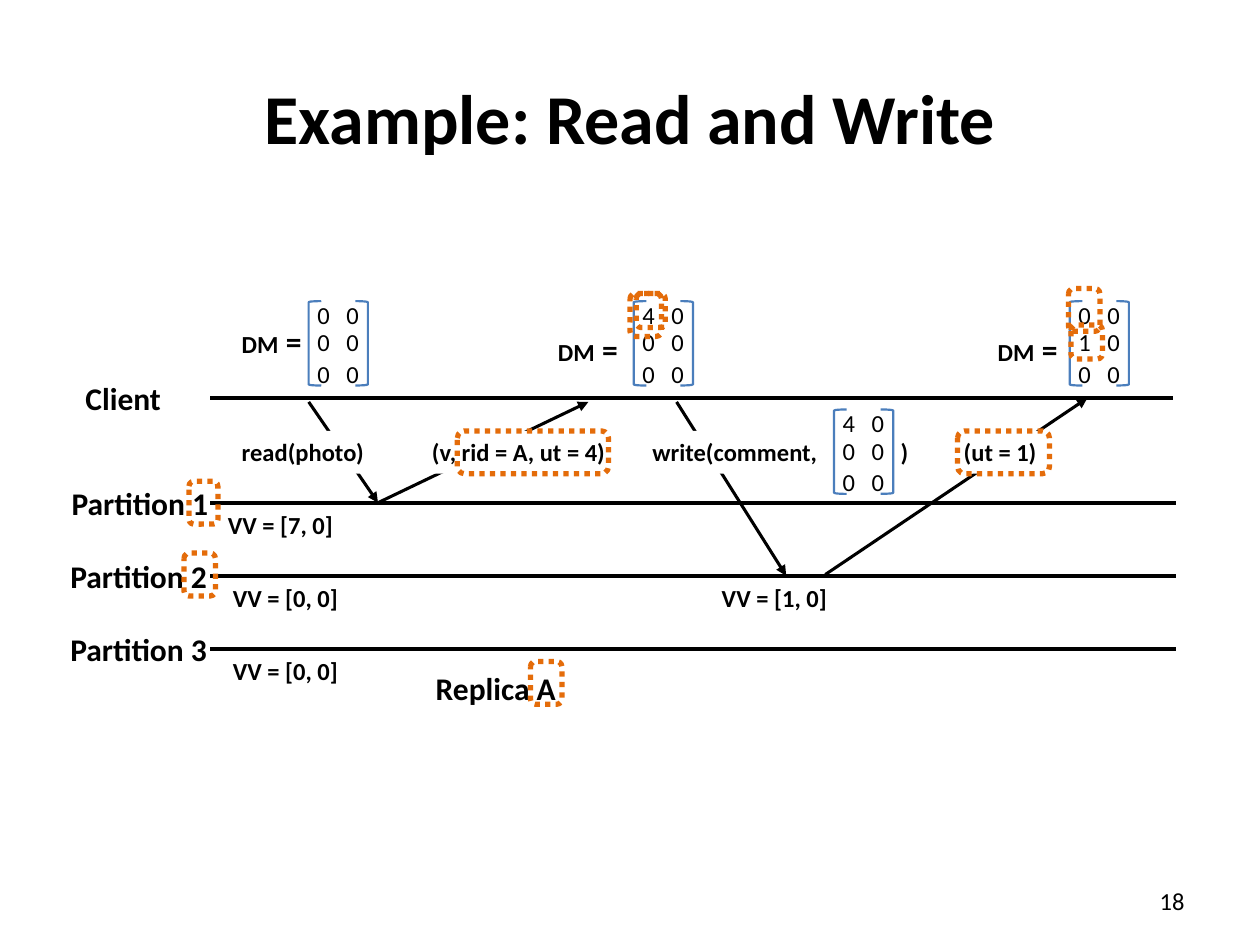
import pptx
import pptx.util
import pptx.dml.color
import pptx.enum.dml
import pptx.enum.shapes
import pptx.enum.text
import pptx.oxml.ns
import lxml.etree

BLACK = pptx.dml.color.RGBColor(0x00, 0x00, 0x00)
WHITE = pptx.dml.color.RGBColor(0xFF, 0xFF, 0xFF)
BLUE = pptx.dml.color.RGBColor(0x4B, 0x7E, 0xBC)
ORANGE = pptx.dml.color.RGBColor(0xE4, 0x6C, 0x0A)
FONT = "Calibri"
SHAPES = pptx.enum.shapes.MSO_SHAPE
qn = pptx.oxml.ns.qn

presentation = pptx.Presentation()
presentation.slide_width = pptx.util.Inches(10)
presentation.slide_height = pptx.util.Inches(7.5)
slide = presentation.slides.add_slide(presentation.slide_layouts[5])

# Grid of 100 columns by 75 rows
COLUMN = presentation.slide_width / 100
ROW = presentation.slide_height / 75


def add_text(left, top, width, height, runs, bold=True, fill=None, tab=None):
    """Add a text box; runs are (text, size) pairs, tab is a stop in columns."""
    box = slide.shapes.add_textbox(int(left * COLUMN), int(top * ROW),
                                   int(width * COLUMN), int(height * ROW))
    if fill is not None:
        box.fill.solid()
        box.fill.fore_color.rgb = fill
    frame = box.text_frame
    frame.word_wrap = tab is not None
    paragraph = frame.paragraphs[0]
    if tab is not None:
        frame.margin_right = 0
        tabs = lxml.etree.SubElement(paragraph._p.get_or_add_pPr(), qn("a:tabLst"))
        lxml.etree.SubElement(tabs, qn("a:tab"), pos=str(int(tab * COLUMN)), algn="l")
    for text, size in runs:
        run = paragraph.add_run()
        run.text = text
        run.font.name = FONT
        run.font.size = pptx.util.Pt(size)
        run.font.bold = bold
        run.font.color.rgb = BLACK
    return box


def add_line(start, end, weight, arrow=False):
    """Add a straight black line between two grid points."""
    line = slide.shapes.add_connector(
        pptx.enum.shapes.MSO_CONNECTOR.STRAIGHT,
        int(start[0] * COLUMN), int(start[1] * ROW),
        int(end[0] * COLUMN), int(end[1] * ROW))
    line.line.color.rgb = BLACK
    line.line.width = pptx.util.Pt(weight)
    if arrow:
        lxml.etree.SubElement(line.line._get_or_add_ln(), qn("a:tailEnd"), type="triangle")
    lxml.etree.SubElement(line._element.spPr, qn("a:effectLst"))


# Title
title = slide.shapes.title
title.left, title.top = int(5 * COLUMN), int(3 * ROW)
title.width, title.height = int(90 * COLUMN), int(12.5 * ROW)
title_paragraph = title.text_frame.paragraphs[0]
title_paragraph.alignment = pptx.enum.text.PP_ALIGN.CENTER
title_run = title_paragraph.add_run()
title_run.text = "Example: Read and Write"
title_run.font.name = FONT
title_run.font.size = pptx.util.Pt(40)
title_run.font.bold = True
title_run.font.color.rgb = BLACK

# Timelines with their names
CLIENT, PARTITION_1, PARTITION_2, PARTITION_3 = 31.6, 39.9, 45.7, 51.5
for name, left, width, level, end in [
    ("Client", 5.8, 8, CLIENT, 93.1),
    ("Partition 1", 4.7, 13, PARTITION_1, 93.3),
    ("Partition 2", 4.6, 13, PARTITION_2, 93.3),
    ("Partition 3", 4.6, 13, PARTITION_3, 93.3),
]:
    add_line((16.7, level), (end, level), 2.5)
    add_text(left, level - 2, width, 4, [(name, 18)])
add_text(33.6, 52.6, 11.6, 4, [("Replica A", 18)])

# Messages between client and partitions
for start, end in [
    ((24.5, 31.9), (30, PARTITION_1)),
    ((30, PARTITION_1), (46.7, 31.9)),
    ((53.7, 31.9), (62.4, PARTITION_2)),
    ((65.5, 45.6), (86.3, CLIENT)),
]:
    add_line(start, end, 1.75, arrow=True)

# Message labels that cover the arrows
for text, left, width, tab in [
    ("read(photo)", 18.2, 11.8, None),
    ("(v, rid = A, ut = 4)", 33.3, 15.9, None),
    ("write(comment,\t)", 50.8, 22.4, 19.7),
    ("(ut = 1)", 75.5, 7.8, None),
]:
    add_text(left, 34.2, width, 3.4, [(text, 14)], fill=WHITE, tab=tab)

# Version vectors under the partition lines
for text, left, level in [
    ("VV = [7, 0]", 17.1, PARTITION_1),
    ("VV = [0, 0]", 17.5, PARTITION_2),
    ("VV = [1, 0]", 56.3, PARTITION_2),
    ("VV = [0, 0]", 17.5, PARTITION_3),
]:
    add_text(left, level + 0.1, 10.4, 3.4, [(text, 14)])

# Dependency matrix names
for left, top in [(18.2, 25.1), (43.3, 25.7), (78.2, 25.7)]:
    add_text(left, top, 6.8, 4, [("DM", 14), (" =", 18)])

# Dependency matrices: bracket pair and three rows of digits
for left, top, first_column in [
    (24.5, 23.9, "000"),
    (50.3, 23.9, "400"),
    (84.9, 23.9, "010"),
    (66.2, 32.5, "400"),
]:
    for kind, offset in [(SHAPES.LEFT_BRACKET, 0), (SHAPES.RIGHT_BRACKET, 3.7)]:
        bracket = slide.shapes.add_shape(kind, int((left + offset) * COLUMN),
                                         int(top * ROW), int(COLUMN), int(6.7 * ROW))
        bracket.shadow.inherit = False
        bracket.fill.background()
        bracket.line.color.rgb = BLUE
        bracket.line.width = pptx.util.Pt(1.25)
    for digit, offset in zip(first_column, (-0.6, 1.6, 4.1)):
        add_text(left - 0.3, top + offset, 6.3, 3.4, [(digit + "\t0", 14)],
                 bold=False, tab=2.3)

# Dotted highlights
for left, top, width, height in [
    (50.5, 23.3, 2.3, 2.7),
    (50, 23.3, 2.5, 3.4),
    (84.8, 22.9, 2.5, 3.4),
    (85, 25.8, 2.5, 2.7),
    (36.3, 34.2, 12, 3.4),
    (76, 34.2, 7.3, 3.4),
    (15, 38.2, 2.3, 3.4),
    (14.6, 43.9, 2.5, 3.4),
    (42.1, 52.5, 2.5, 3.4),
]:
    highlight = slide.shapes.add_shape(
        SHAPES.ROUNDED_RECTANGLE, int(left * COLUMN), int(top * ROW),
        int(width * COLUMN), int(height * ROW))
    highlight.shadow.inherit = False
    highlight.fill.background()
    highlight.line.color.rgb = ORANGE
    highlight.line.width = pptx.util.Pt(3)
    highlight.line.dash_style = pptx.enum.dml.MSO_LINE.ROUND_DOT

# Slide number
number = add_text(71.7, 69.5, 23.3, 4, [("18", 14)], bold=False)
number.text_frame.word_wrap = True
number.text_frame.vertical_anchor = pptx.enum.text.MSO_ANCHOR.MIDDLE
number.text_frame.paragraphs[0].alignment = pptx.enum.text.PP_ALIGN.RIGHT

presentation.save("out.pptx")
